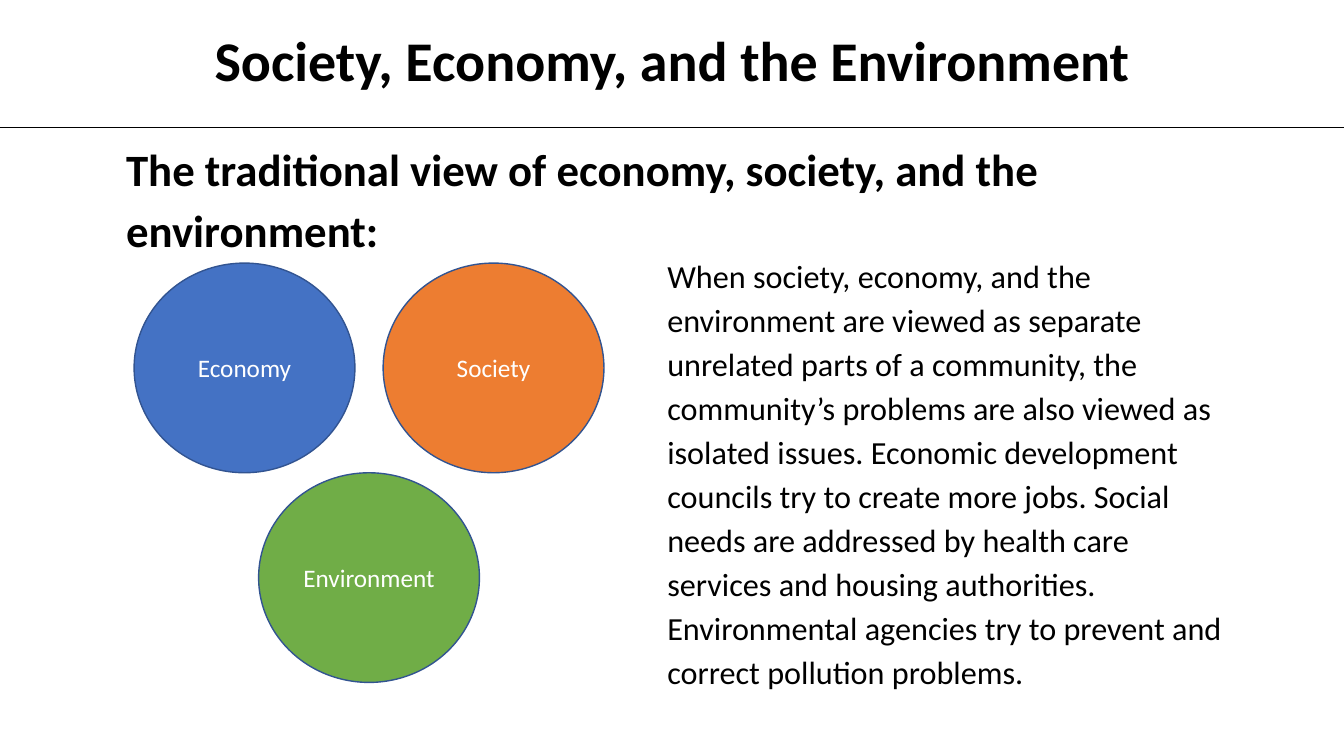
from lxml import etree
from pptx import Presentation
from pptx.dml.color import RGBColor
from pptx.enum.shapes import MSO_CONNECTOR, MSO_SHAPE
from pptx.enum.text import MSO_ANCHOR, MSO_AUTO_SIZE, PP_ALIGN
from pptx.oxml.ns import qn
from pptx.util import Inches, Pt

OVAL = MSO_SHAPE.OVAL
STRAIGHT = MSO_CONNECTOR.STRAIGHT
TOP, MIDDLE = MSO_ANCHOR.TOP, MSO_ANCHOR.MIDDLE
LEFT, CENTER = PP_ALIGN.LEFT, PP_ALIGN.CENTER
FIXED = MSO_AUTO_SIZE.NONE

BLACK = RGBColor(0x00, 0x00, 0x00)
WHITE = RGBColor(0xFF, 0xFF, 0xFF)
BLUE = RGBColor(0x44, 0x72, 0xC4)
ORANGE = RGBColor(0xED, 0x7D, 0x31)
GREEN = RGBColor(0x70, 0xAD, 0x47)
NAVY = RGBColor(0x32, 0x54, 0x91)

WIDTH, HEIGHT = 13.33, 7.5

BODY = (
    "When society, economy, and the environment are viewed as separate "
    "unrelated parts of a community, the community’s problems are also viewed "
    "as isolated issues. Economic development councils try to create more jobs. "
    "Social needs are addressed by health care services and housing authorities. "
    "Environmental agencies try to prevent and correct pollution problems."
)


def write(shape, text, size, color=BLACK, bold=False, align=LEFT,
          anchor=MIDDLE, spacing=1.0, before=0, wrap=True):
    frame = shape.text_frame
    frame.auto_size = FIXED
    frame.word_wrap = wrap
    frame.vertical_anchor = anchor
    para = frame.paragraphs[0]
    para.alignment = align
    para.line_spacing = spacing
    para.space_before = Pt(before)
    run = para.add_run()
    run.text = text
    run.font.name = "Calibri"
    run.font.size = Pt(size)
    run.font.bold = bold
    run.font.color.rgb = color


def add_head(slide, left, top, width, height):
    box = slide.shapes.add_textbox(
        Inches(left + 1.97), Inches(top + 0.2), Inches(width - 3.94), Inches(0.77))
    write(box, "Society, Economy, and the Environment", 40, bold=True,
          align=CENTER, anchor=TOP, before=1, wrap=False)
    base = Inches(top + height)
    rule = slide.shapes.add_connector(
        STRAIGHT, Inches(left), base, Inches(left + width), base)
    rule.line.color.rgb = BLACK
    rule.line.width = Pt(0.5)
    etree.SubElement(rule._element.spPr, qn("a:effectLst"))


def add_title(slide, left, top, width, height):
    title = slide.shapes.title
    title.left, title.top = Inches(left), Inches(top)
    title.width, title.height = Inches(width), Inches(height)
    write(title, "The traditional view of economy, society, and the environment:",
          32, bold=True, spacing=1.14)


def add_rings(slide, left, top, width, height):
    wide, tall = 2.19, height / 2
    step = width - wide
    rings = [
        ("Economy", BLUE, 0, 0),
        ("Society", ORANGE, step, 0),
        ("Environment", GREEN, step / 2, tall),
    ]
    for name, fill, right, down in rings:
        ring = slide.shapes.add_shape(
            OVAL, Inches(left + right), Inches(top + down), Inches(wide), Inches(tall))
        ring.shadow.inherit = False
        ring.fill.solid()
        ring.fill.fore_color.rgb = fill
        ring.line.color.rgb = NAVY
        ring.line.width = Pt(1)
        write(ring, name, 18, color=WHITE, align=CENTER)


def add_body(slide, left, top, width, height):
    box = slide.shapes.add_textbox(
        Inches(left), Inches(top), Inches(width), Inches(height))
    write(box, BODY, 23, anchor=TOP, spacing=1.14, before=6)


def main():
    deck = Presentation()
    deck.slide_width, deck.slide_height = Inches(WIDTH), Inches(HEIGHT)
    slide = deck.slides.add_slide(deck.slide_layouts[5])
    add_title(slide, 1.15, 1.29, 10.8, 1.29)
    add_rings(slide, 1.33, 2.61, 4.66, 4.16)
    add_body(slide, 6.52, 2.44, 5.84, 4.49)
    add_head(slide, 0, 0, WIDTH, 1.26)
    deck.save("out.pptx")


if __name__ == "__main__":
    main()
